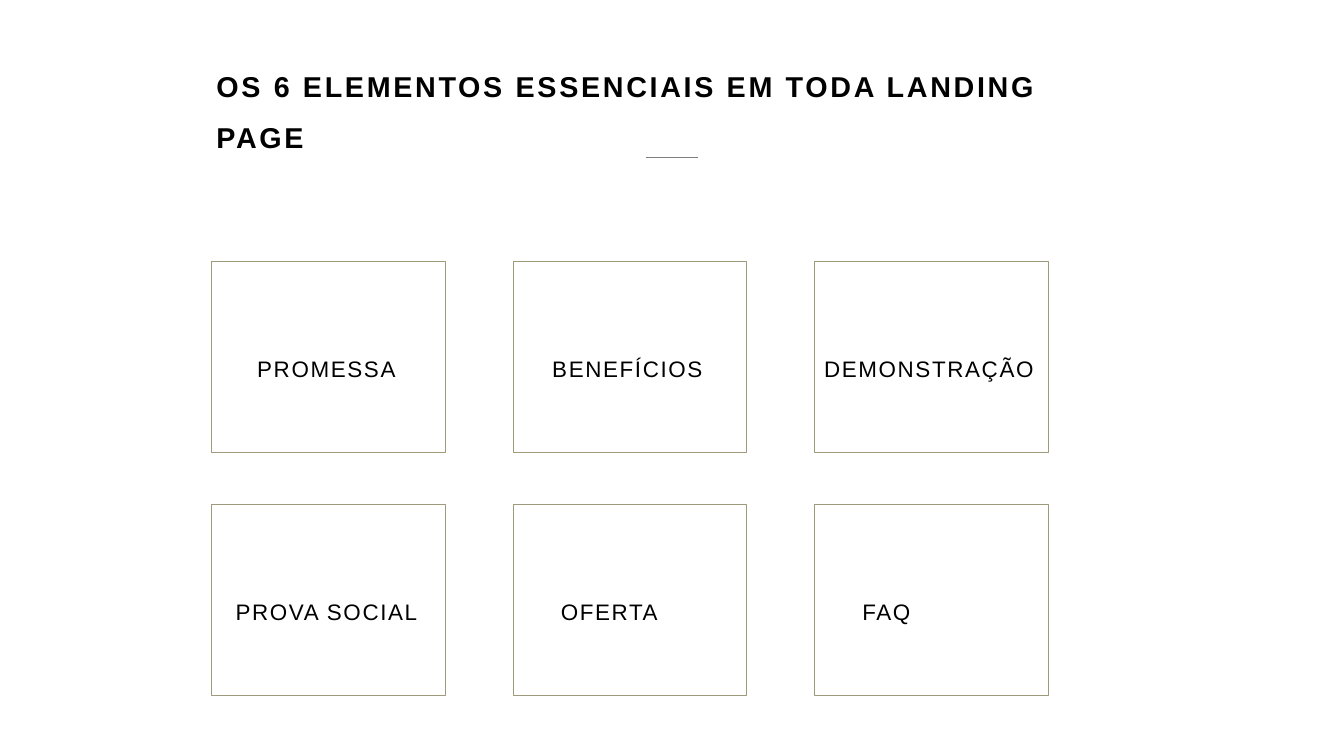
from dataclasses import dataclass

from lxml import etree
from pptx import Presentation
from pptx import util as u
from pptx.dml.color import RGBColor
from pptx.enum import shapes, text
from pptx.oxml import ns

SCALE = 9144
LABELS = [
    ("PROMESSA", 279), ("BENEFÍCIOS", 302), ("DEMONSTRAÇÃO", 420),
    ("PROVA SOCIAL", 365), ("OFERTA", 268), ("FAQ", 268),
]


@dataclass(frozen=True)
class Theme:
    """Colours, type sizes and spacing of the slide."""
    font: str = "Arial"
    ink: str = "000000"
    rule: str = "7F7F7F"
    border: str = "9E9B7C"
    title_size: int = 41
    label_size: int = 32
    title_tracking: int = 380
    label_tracking: int = 230
    leading: int = 74
    line_width: int = 1


def px(*lengths):
    """Turn whole px into EMU."""
    return [u.Emu(length * SCALE) for length in lengths]


class SlideBuilder:
    """Draws styled elements on the current slide."""

    def __init__(self, slide, theme):
        """Keep the slide and its theme."""
        self.slide = slide
        self.theme = theme

    def set_text(self, box, words, size, tracking, wrap, fit, bold=False):
        """Fill a box with one tracked paragraph."""
        frame = box.text_frame
        frame_format = {
            "margin_left": 0, "margin_top": 0, "margin_right": 0, "margin_bottom": 0,
            "vertical_anchor": text.MSO_ANCHOR.MIDDLE,
            "word_wrap": wrap, "auto_size": fit,
        }
        for name, value in frame_format.items():
            setattr(frame, name, value)
        para = frame.paragraphs[0]
        para.alignment = text.PP_ALIGN.LEFT
        para.line_spacing = u.Pt(self.theme.leading)
        span = para.add_run()
        span.text = words
        font_format = {"name": self.theme.font, "size": u.Pt(size), "bold": bold}
        for name, value in font_format.items():
            setattr(span.font, name, value)
        span.font.color.rgb = RGBColor.from_string(self.theme.ink)
        span._r.get_or_add_rPr().set("spc", str(tracking))

    def outline(self, item, colour):
        """Give a shape or connector its thin line."""
        item.line.color.rgb = RGBColor.from_string(colour)
        item.line.width = u.Pt(self.theme.line_width)

    def title(self, words, left, top, width, height):
        """Place and format the title placeholder."""
        box = self.slide.shapes.title
        box.left, box.top, box.width, box.height = px(left, top, width, height)
        self.set_text(box, words, self.theme.title_size, self.theme.title_tracking,
                      True, text.MSO_AUTO_SIZE.NONE, bold=True)

    def rule(self, left, right, top):
        """Draw a horizontal rule."""
        line = self.slide.shapes.add_connector(
            shapes.MSO_CONNECTOR.STRAIGHT, *px(left, top, right, top))
        self.outline(line, self.theme.rule)
        etree.SubElement(line._element.spPr, ns.qn("a:effectLst"))

    def label(self, words, left, top, width, height):
        """Add a single-line label."""
        box = self.slide.shapes.add_textbox(*px(left, top, width, height))
        self.set_text(box, words, self.theme.label_size, self.theme.label_tracking,
                      False, text.MSO_AUTO_SIZE.SHAPE_TO_FIT_TEXT)

    def card(self, left, top, width, height):
        """Draw an unfilled card frame."""
        card = self.slide.shapes.add_shape(
            shapes.MSO_SHAPE.RECTANGLE, *px(left, top, width, height))
        card.shadow.inherit = False
        card.fill.background()
        self.outline(card, self.theme.border)


def main():
    """Build and save the deck."""
    deck = Presentation()
    deck.slide_width, deck.slide_height = px(2665, 1500)
    page = SlideBuilder(deck.slides.add_slide(deck.slide_layouts[5]), Theme())
    page.title("OS 6 ELEMENTOS ESSENCIAIS EM TODA LANDING PAGE", 429, 143, 1806, 122)
    page.rule(1280, 1385, 313)
    card_width, card_height = 463, 379
    for index, (words, width) in enumerate(LABELS):
        row, column = divmod(index, 3)
        left, top = 420 + column * 1195 // 2, 518 + row * 483
        page.label(words, left + (card_width - width) // 2 - 2, top + 135, width, 107)
        page.card(left, top, card_width, card_height)
    deck.save("out.pptx")


if __name__ == "__main__":
    main()
